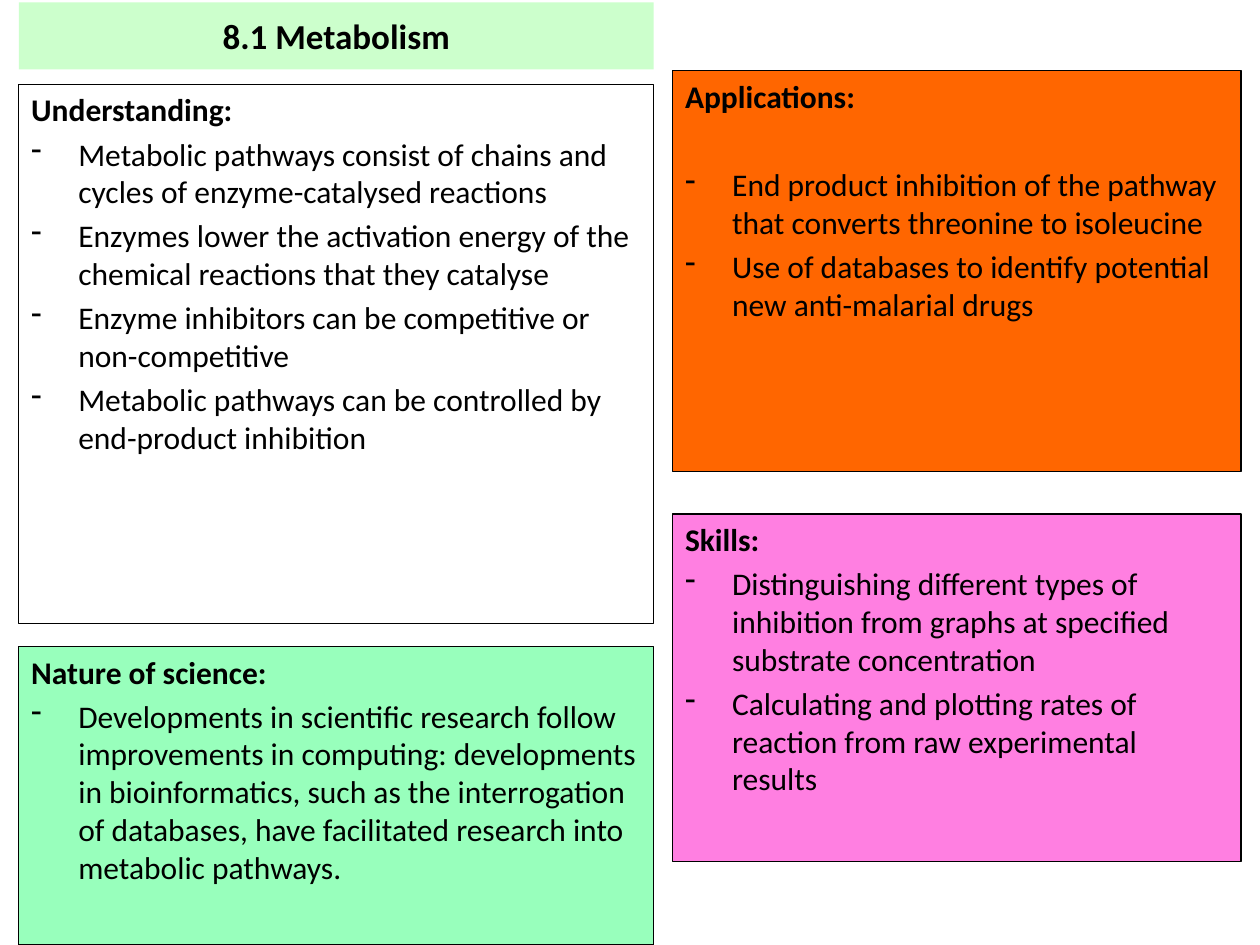
from pptx import Presentation
from pptx.dml.color import RGBColor
from pptx.enum.shapes import MSO_SHAPE
from pptx.enum.text import MSO_ANCHOR, PP_ALIGN
from pptx.oxml import parse_xml
from pptx.oxml.ns import nsdecls
from pptx.util import Cm, Pt

RECTANGLE = MSO_SHAPE.RECTANGLE
TOP, MIDDLE = MSO_ANCHOR.TOP, MSO_ANCHOR.MIDDLE
LEFT, CENTER = PP_ALIGN.LEFT, PP_ALIGN.CENTER

BLACK = "000000"
LEFT_COLUMN = (0.38, 12.8)    # left and width in cm
RIGHT_COLUMN = (13.56, 11.46)
DASH_INDENT = Cm(0.95)

prs = Presentation()
prs.slide_width, prs.slide_height = Cm(25.4), Cm(19.05)
slide = prs.slides.add_slide(prs.slide_layouts[6])


def add_panel(column, top, height, fill, outline, anchor):
    """Add a rectangle in a column and return its empty text frame."""
    left, width = column
    panel = slide.shapes.add_shape(RECTANGLE, Cm(left), Cm(top), Cm(width), Cm(height))
    panel.shadow.inherit = False
    if fill:
        panel.fill.solid()
        panel.fill.fore_color.rgb = RGBColor.from_string(fill)
    else:
        panel.fill.background()
    if outline:
        panel.line.color.rgb = RGBColor.from_string(outline)
        panel.line.width = Pt(0.75)
    else:
        panel.line.fill.background()
    panel.text_frame.word_wrap = True
    panel.text_frame.vertical_anchor = anchor
    return panel.text_frame


def write(paragraph, text, size, bold, **paragraph_format):
    for attribute, value in paragraph_format.items():
        setattr(paragraph, attribute, value)
    font_format = {"name": "Calibri", "size": Pt(size), "bold": bold}
    run = paragraph.add_run()
    run.text = text
    for attribute, value in font_format.items():
        setattr(run.font, attribute, value)
    run.font.color.rgb = RGBColor.from_string(BLACK)


title = add_panel(LEFT_COLUMN, 0.05, 1.35, "CCFFCC", None, MIDDLE)
write(title.paragraphs[0], "8.1 Metabolism", 20, True, alignment=CENTER)

# column, top, height, fill, space after heading in points, heading, points
sections = [
    (LEFT_COLUMN, 1.7, 10.87, None, 0, "Understanding:", [
        "Metabolic pathways consist of chains and cycles of enzyme-catalysed reactions",
        "Enzymes lower the activation energy of the chemical reactions that they catalyse",
        "Enzyme inhibitors can be competitive or non-competitive",
        "Metabolic pathways can be controlled by end-product inhibition",
    ]),
    (RIGHT_COLUMN, 1.42, 8.08, "FF6600", 25.3, "Applications:", [
        "End product inhibition of the pathway that converts threonine to isoleucine",
        "Use of databases to identify potential new anti-malarial drugs",
    ]),
    (RIGHT_COLUMN, 10.36, 7.01, "FF7FE1", 0, "Skills:", [
        "Distinguishing different types of inhibition from graphs at specified "
        "substrate concentration",
        "Calculating and plotting rates of reaction from raw experimental results",
    ]),
    (LEFT_COLUMN, 13.03, 6.02, "98FFBC", 0, "Nature of science:", [
        "Developments in scientific research follow improvements in computing: "
        "developments in bioinformatics, such as the interrogation of databases, "
        "have facilitated research into metabolic pathways.",
    ]),
]

for column, top, height, fill, heading_gap, heading, points in sections:
    section = add_panel(column, top, height, fill, BLACK, TOP)
    spacing = {"alignment": LEFT, "space_before": Pt(3.6)}
    write(section.paragraphs[0], heading, 18, True, space_after=Pt(heading_gap), **spacing)
    for point in points:
        paragraph = section.add_paragraph()
        write(paragraph, point, 18, False, **spacing)
        properties = paragraph._p.get_or_add_pPr()
        properties.set("marL", str(DASH_INDENT))
        properties.set("indent", str(-DASH_INDENT))
        properties.append(parse_xml(f'<a:buChar {nsdecls("a")} char="-"/>'))

prs.save("out.pptx")
